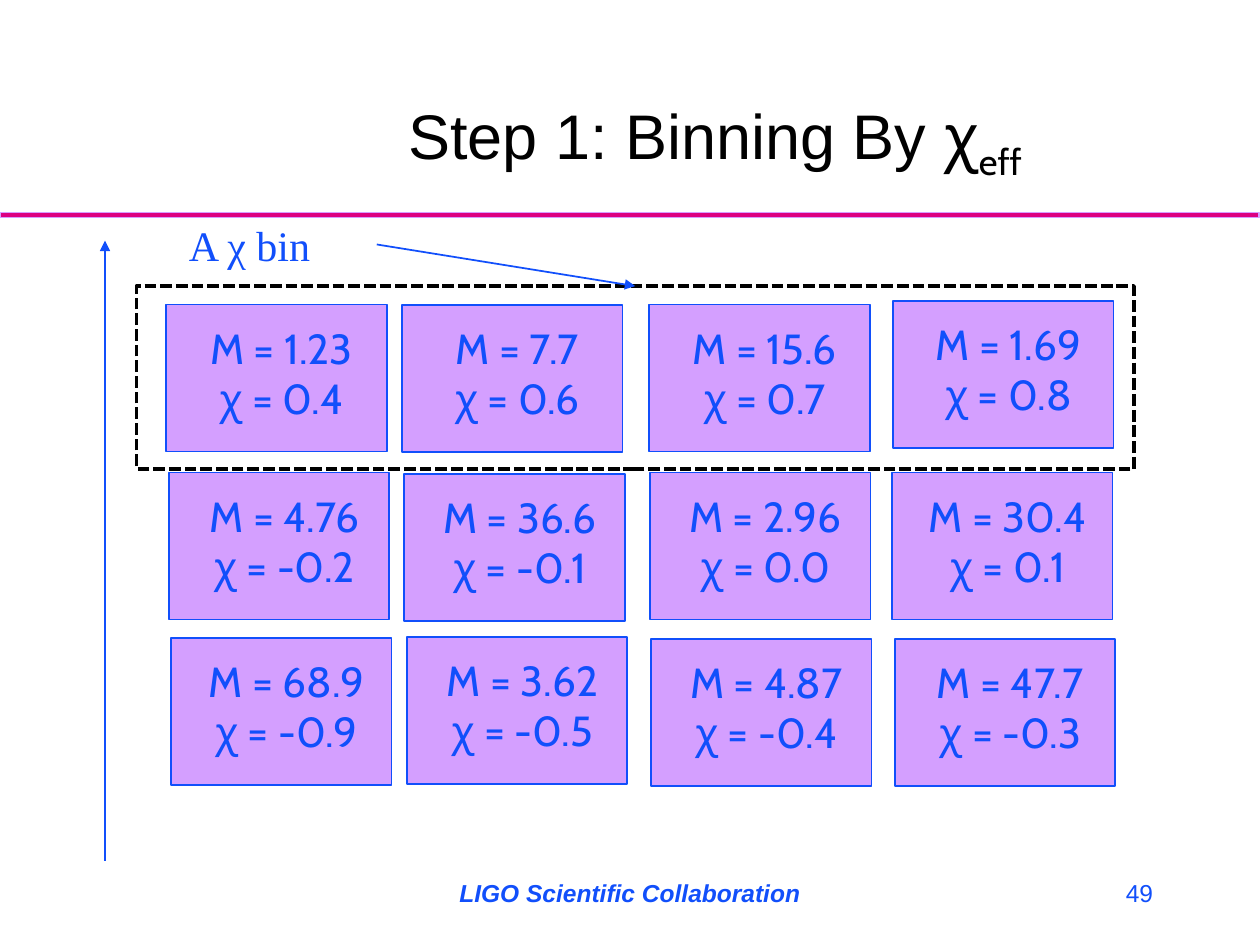
from dataclasses import dataclass
from typing import Any

from lxml.etree import SubElement
from pptx import Presentation
from pptx.dml.color import RGBColor
from pptx.enum.dml import MSO_LINE
from pptx.enum.shapes import MSO_CONNECTOR as CONN, MSO_SHAPE as SHAPE
from pptx.enum.text import MSO_ANCHOR as ANCHOR, PP_ALIGN as ALIGN
from pptx.oxml.ns import qn
from pptx.util import Pt


def rgb(value):
    return RGBColor.from_string(value)


@dataclass
class Deck:
    s: Any
    blue: str = "114FFB"
    lilac: str = "D49FFF"
    magenta: str = "DC0081"
    black: str = "000000"

    def rect(self, x, y, w, h, fill=None, line="114FFB", width=1, dash=None, parent=None):
        sp = (parent or self.s).shapes.add_shape(SHAPE.RECTANGLE, Pt(x), Pt(y), Pt(w), Pt(h))
        sp.shadow.inherit = False
        if fill:
            sp.fill.solid()
            sp.fill.fore_color.rgb = rgb(fill)
        else:
            sp.fill.background()
        sp.line.color.rgb = rgb(line)
        sp.line.width = Pt(width)
        if dash:
            sp.line.dash_style = dash
        return sp

    def text(self, x, y, w, h, lines, size, font, color=None, align=ALIGN.CENTER,
             anchor=ANCHOR.TOP, parent=None):
        """Each line is a list of run texts."""
        sp = (parent or self.s).shapes.add_textbox(Pt(x), Pt(y), Pt(w), Pt(h))
        tf = sp.text_frame
        tf.word_wrap = True
        tf.vertical_anchor = anchor
        for i, runs in enumerate(lines):
            p = tf.add_paragraph() if i else tf.paragraphs[0]
            p.alignment = align
            for content in runs:
                r = p.add_run()
                r.text = content
                r.font.size = Pt(size)
                r.font.name = font
                r.font.color.rgb = rgb(color or self.blue)
        return tf

    def arrow(self, x1, y1, x2, y2):
        c = self.s.shapes.add_connector(CONN.STRAIGHT, Pt(x1), Pt(y1), Pt(x2), Pt(y2))
        c.line.color.rgb = rgb(self.blue)
        c.line.width = Pt(1)
        SubElement(c.line._get_or_add_ln(), qn("a:tailEnd"), type="triangle")
        SubElement(c._element.spPr, qn("a:effectLst"))
        return c

    def card(self, x, y, mass, chi):
        grp = self.s.shapes.add_group_shape()
        self.rect(x, y, 126, 84, fill=self.lilac, parent=grp)
        self.text(x, y + 6.5, 132, 94, [[f"M = {mass}"], [f"χ = {chi}"]], 24, "Cabin", parent=grp)


# Left, top, mass and spin of each binary, one row per chi bin
BINS = [
    [(95, 174, "1.23", "0.4"), (229.7, 174.2, "7.7", "0.6"),
     (371, 174, "15.6", "0.7"), (510.3, 172, "1.69", "0.8")],
    [(96.5, 270, "4.76", "-0.2"), (231, 270.7, "36.6", "-0.1"),
     (371.5, 270, "2.96", "0.0"), (509.8, 270, "30.4", "0.1")],
    [(97.8, 364.5, "68.9", "-0.9"), (232.5, 364, "3.62", "-0.5"),
     (372, 365, "4.87", "-0.4"), (511.3, 365, "47.7", "-0.3")],
]


def main():
    prs = Presentation()
    prs.slide_width, prs.slide_height = Pt(720), Pt(540)
    d = Deck(prs.slides.add_slide(prs.slide_layouts[6]))

    # Title and rule
    d.rect(0, 121.5, 719.5, 2.8, fill=d.magenta, line=d.lilac, width=0.75)
    tf = d.text(126, 18, 570, 90, [["Step 1: Binning By ", "χ", "eff "]], 36, "Cabin",
                d.black, anchor=ANCHOR.BOTTOM)
    runs = tf.paragraphs[0].runs
    runs[0].font.name = "Arial"
    runs[2].font._element.set("baseline", "-25000")

    # Footer
    tf = d.text(246, 492, 228, 36, [["LIGO Scientific Collaboration"]], 14, "Arial",
                anchor=ANCHOR.MIDDLE)
    font = tf.paragraphs[0].runs[0].font
    font.bold = font.italic = True
    d.text(516, 492, 150, 36, [["49"]], 14, "Arial", align=ALIGN.RIGHT, anchor=ANCHOR.MIDDLE)

    # Spin axis and binaries
    d.arrow(60, 492, 60, 137.5)
    for row in BINS:
        for binary in row:
            d.card(*binary)

    # Highlighted bin and its label
    frame = d.rect(78, 163.5, 570, 104.5, line=d.black, width=2.25, dash=MSO_LINE.SQUARE_DOT)
    d.text(100.8, 121.7, 114.5, 36, [["A χ bin"]], 24, "Times New Roman", align=ALIGN.LEFT)
    d.arrow(215.3, 139.7, 363, 163.5).end_connect(frame, 0)

    prs.save("out.pptx")


if __name__ == "__main__":
    main()
